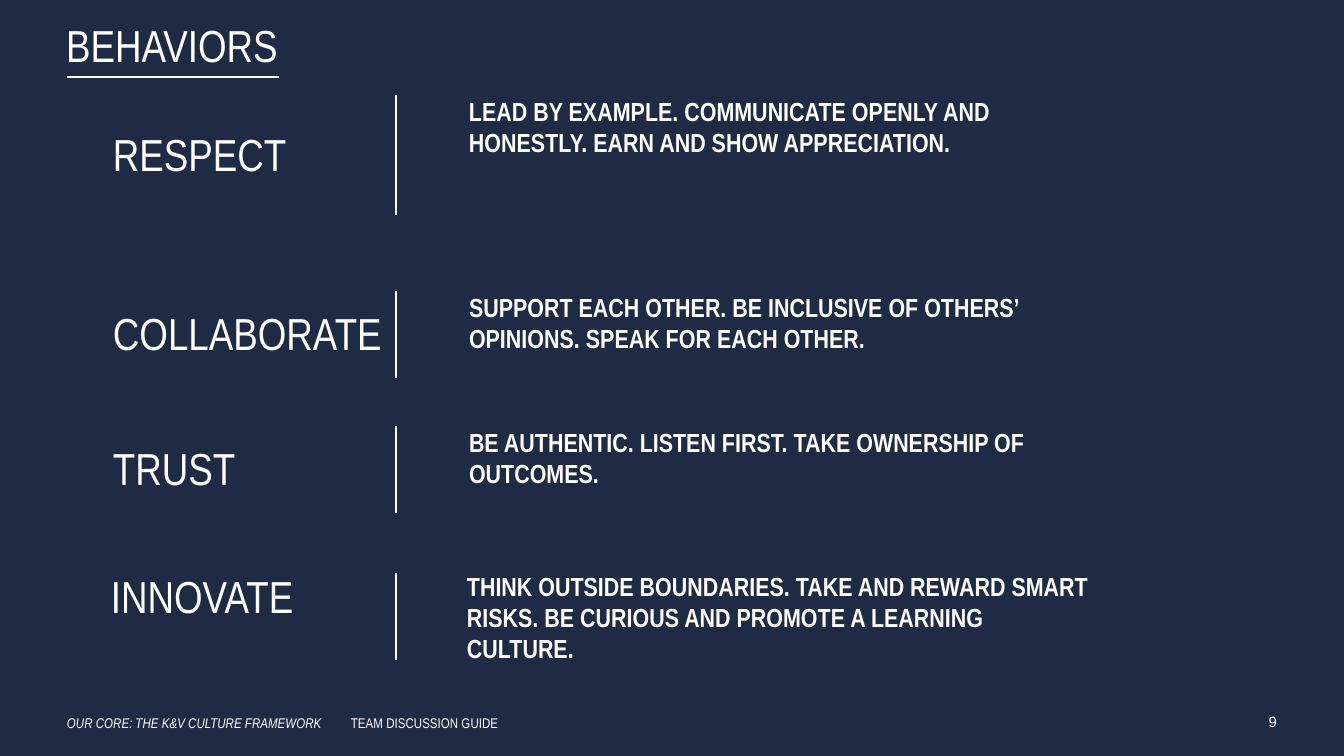
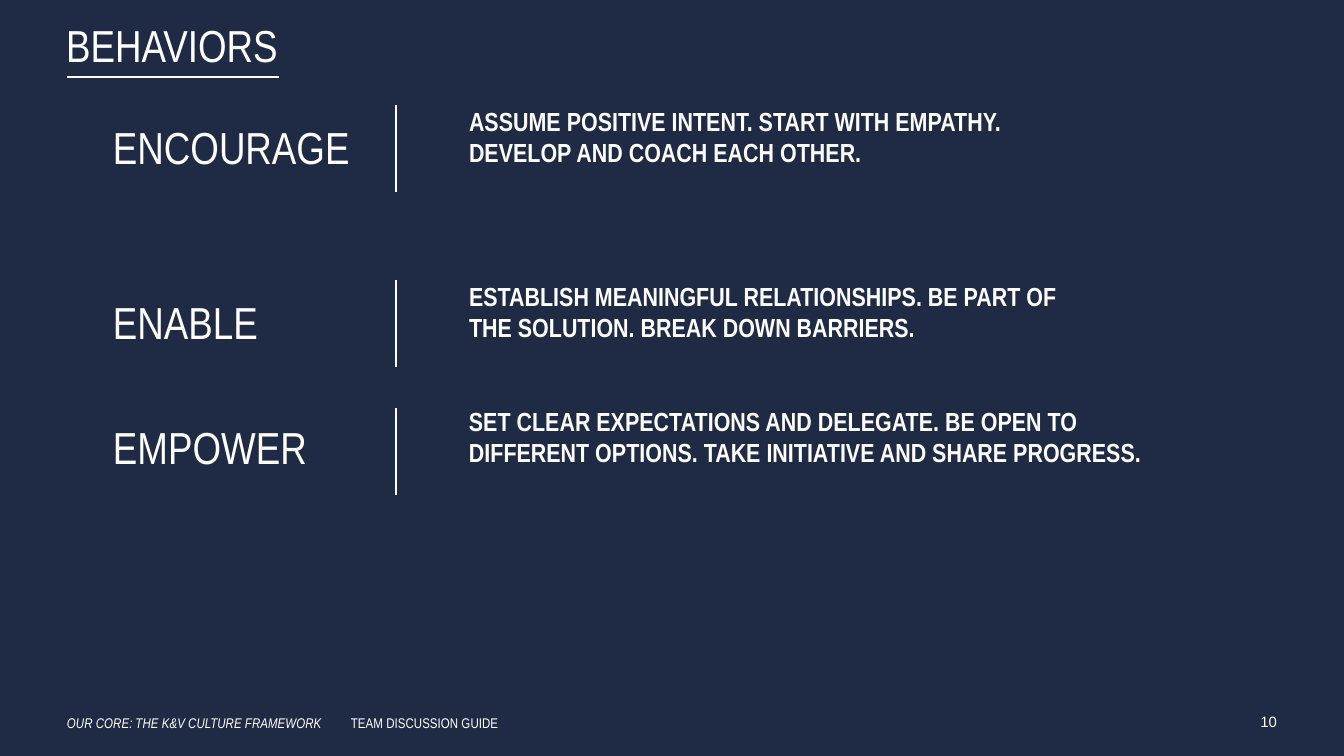
from collections import namedtuple

from lxml import etree
from pptx import Presentation
from pptx.dml.color import RGBColor
from pptx.enum.shapes import MSO_CONNECTOR
from pptx.enum.text import MSO_ANCHOR, PP_ALIGN
from pptx.oxml.ns import qn
from pptx.util import Pt

SCALE = 9144000 / 1344
WIDE, HIGH = 1344, 756
LINE = MSO_CONNECTOR.STRAIGHT
TOP, MIDDLE = MSO_ANCHOR.TOP, MSO_ANCHOR.MIDDLE
LEFT, CENTER, RIGHT = PP_ALIGN.LEFT, PP_ALIGN.CENTER, PP_ALIGN.RIGHT
COLORS = {"navy": "1F2A44", "white": "FFFFFF"}
NARROW, PLAIN = "Arial Narrow", "Arial"
NAME_X, RULE_X, WORD_X = 113, 396, 469
FOOT_Y, FOOT_TAB = 712, 284

Row = namedtuple(
    "Row", "name words name_y name_h rule_y rule_h word_y word_w word_h shift",
    defaults=[0])


def even_row(name, words, top, wide, tall=90, drop=0):
    """Return a row whose name, rule and words start together."""
    return Row(name, words, top, 90, top + drop, 87, top, wide, tall)


SLIDES = [
    (9, [
        Row("RESPECT",
            "LEAD BY EXAMPLE. COMMUNICATE OPENLY AND HONESTLY. "
            "EARN AND SHOW APPRECIATION.",
            95, 124, 95, 120, 95, 628, 150),
        even_row("COLLABORATE",
                 "SUPPORT EACH OTHER. BE INCLUSIVE OF OTHERS’ OPINIONS. "
                 "SPEAK FOR EACH OTHER.", 291, 624, 106),
        even_row("TRUST",
                 "BE AUTHENTIC. LISTEN FIRST. TAKE OWNERSHIP OF OUTCOMES.",
                 426, 617),
        Row("INNOVATE",
            "THINK OUTSIDE BOUNDARIES. TAKE AND REWARD SMART RISKS. "
            "BE CURIOUS AND PROMOTE A LEARNING CULTURE.",
            537, 124, 573, 87, 570, 628, 150, -2),
    ]),
    (10, [
        even_row("ENCOURAGE",
                 "ASSUME POSITIVE INTENT. START WITH EMPATHY. "
                 "DEVELOP AND COACH EACH OTHER.", 105, 624, 106),
        even_row("ENABLE",
                 "ESTABLISH MEANINGFUL RELATIONSHIPS. BE PART OF THE SOLUTION. "
                 "BREAK DOWN BARRIERS.", 280, 617),
        even_row("EMPOWER",
                 "SET CLEAR EXPECTATIONS AND DELEGATE. BE OPEN TO DIFFERENT "
                 "OPTIONS. TAKE INITIATIVE AND SHARE PROGRESS.",
                 405, 732, drop=3),
    ]),
]


def px(size):
    """Turn pixels into EMU."""
    return round(size * SCALE)


def color(key):
    """Look up a colour by name."""
    return RGBColor.from_string(COLORS[key])


def style(font, size, face=NARROW, bold=False, slant=False):
    """Format a font in white."""
    font.size, font.name = Pt(size), face
    font.bold, font.italic = bold, slant
    font.color.rgb = color("white")


def add_box(slide, area, wrap=True, anchor=TOP, inset=0):
    """Add an empty text box and return its frame."""
    frame = slide.shapes.add_textbox(*map(px, area)).text_frame
    frame.margin_left = frame.margin_right = frame.margin_bottom = 0
    frame.margin_top = px(inset)
    frame.word_wrap, frame.vertical_anchor = wrap, anchor
    return frame


def add_text(slide, text, area, size, face=NARROW, bold=False, align=LEFT,
             space=None, **box):
    """Add a text box with one styled paragraph."""
    frame = add_box(slide, area, **box)
    frame.text = text
    para = frame.paragraphs[0]
    para.alignment, para.line_spacing = align, space
    style(para.runs[0].font, size, face, bold)


def add_head(slide, text, area, align=LEFT):
    """Add large text centred on its height."""
    add_text(slide, text, area, 24, align=align, space=0.9, anchor=MIDDLE)


def add_rule(slide, x, y, wide, tall):
    """Add a thin white line."""
    rule = slide.shapes.add_connector(
        LINE, px(x), px(y), px(x + wide), px(y + tall))
    rule.line.color.rgb, rule.line.width = color("white"), Pt(1)
    etree.SubElement(rule.element.spPr, qn("a:effectLst"))


def add_row(slide, row):
    """Add one behavior with its rule and its words."""
    add_text(slide, row.words,
             (WORD_X + row.shift, row.word_y, row.word_w, row.word_h),
             14, bold=True)
    add_head(slide, row.name,
             (NAME_X + row.shift, row.name_y, 294, row.name_h))
    add_rule(slide, RULE_X, row.rule_y, 0, row.rule_h)


def add_foot(slide, page):
    """Add the footer line and the page number."""
    frame = add_box(slide, (67, FOOT_Y, 585, 27), wrap=False, inset=3)
    para = frame.paragraphs[0]
    stops = etree.SubElement(para._p.get_or_add_pPr(), qn("a:tabLst"))
    etree.SubElement(stops, qn("a:tab"), pos=str(px(FOOT_TAB)), algn="l")
    parts = [("OUR CORE: THE K&V CULTURE FRAMEWORK\t", True),
             ("TEAM DISCUSSION GUIDE", False)]
    for text, slant in parts:
        run = para.add_run()
        run.text = text
        style(run.font, 7.5, slant=slant)
    add_text(slide, str(page), (1210, FOOT_Y, 67, 27), 8, PLAIN,
             align=RIGHT, wrap=False, inset=1)


def add_slide(deck, page, rows):
    """Add one slide of behaviors."""
    slide = deck.slides.add_slide(deck.slide_layouts[6])
    fill = slide.background.fill
    fill.solid()
    fill.fore_color.rgb = color("navy")
    add_head(slide, "BEHAVIORS", (0, 0, 344, 95), CENTER)
    add_rule(slide, 67, 77, 212, 0)
    for row in rows:
        add_row(slide, row)
    add_foot(slide, page)


def main():
    """Build and save the deck."""
    deck = Presentation()
    deck.slide_width, deck.slide_height = px(WIDE), px(HIGH)
    for page, rows in SLIDES:
        add_slide(deck, page, rows)
    deck.save("out.pptx")


if __name__ == "__main__":
    main()
